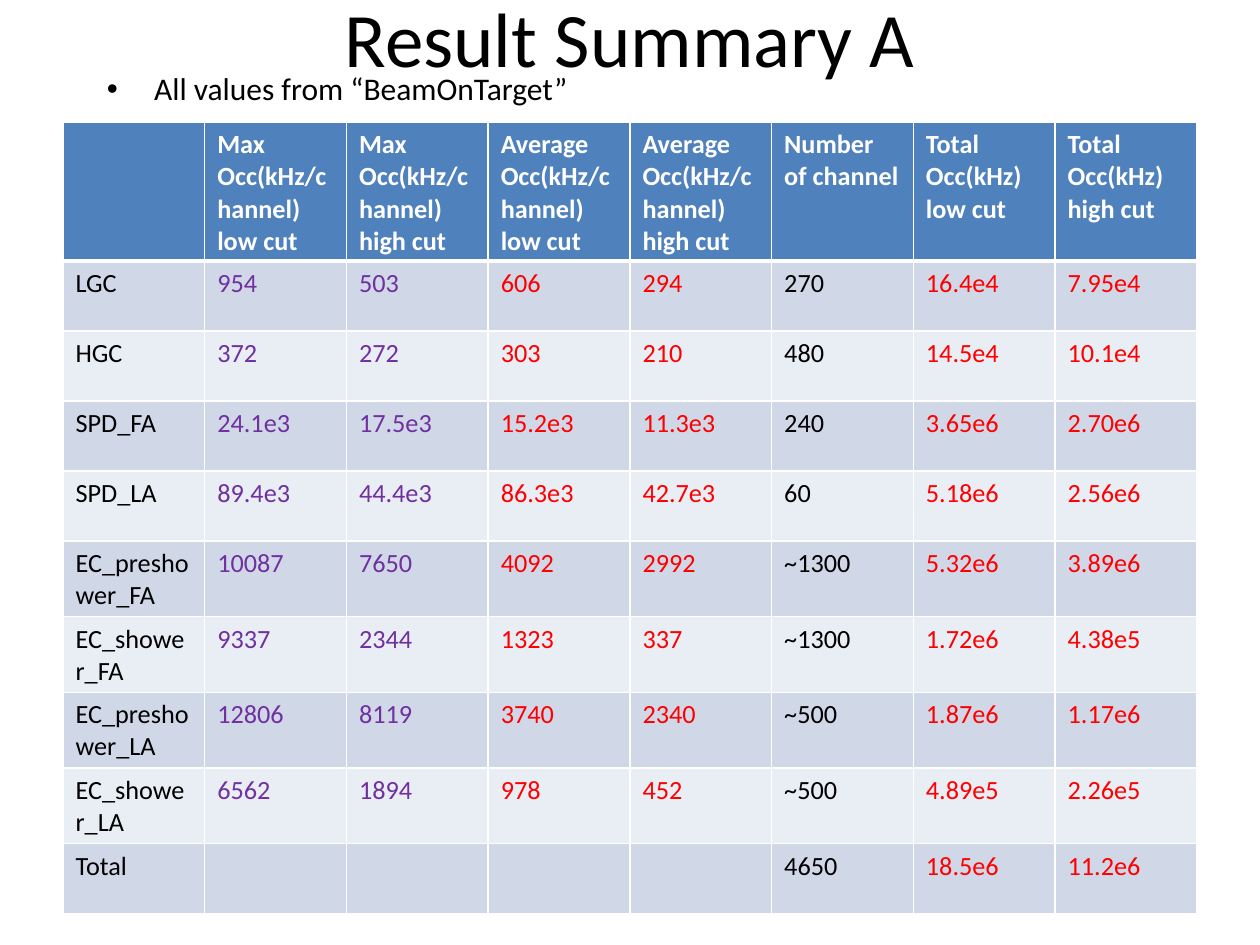
"""Build the occupancy result summary slide."""
import pptx
import pptx.dml.color
import pptx.enum.text
import pptx.oxml.ns
import pptx.util
import lxml.etree

Pt = pptx.util.Pt
RGBColor = pptx.dml.color.RGBColor
qn = pptx.oxml.ns.qn

FONT = "Calibri"
BLACK = RGBColor(0x00, 0x00, 0x00)
WHITE = RGBColor(0xFF, 0xFF, 0xFF)
BLUE = RGBColor(0x4F, 0x81, 0xBD)
DARK = RGBColor(0xD0, 0xD8, 0xE8)
LIGHT = RGBColor(0xE9, 0xED, 0xF4)
PURPLE = RGBColor(0x70, 0x30, 0xA0)
RED = RGBColor(0xFF, 0x00, 0x00)

INKS = [BLACK, PURPLE, PURPLE, RED, RED, BLACK, RED, RED]
HEADS = [
    "",
    "Max Occ(kHz/channel)\nlow cut",
    "Max Occ(kHz/channel)\nhigh cut",
    "Average Occ(kHz/channel)\nlow cut",
    "Average Occ(kHz/channel)\nhigh cut",
    "Number of channel",
    "Total\nOcc(kHz)\nlow cut",
    "Total\nOcc(kHz)\nhigh cut",
]
ROWS = [
    ["LGC", "954", "503", "606", "294", "270", "16.4e4", "7.95e4"],
    ["HGC", "372", "272", "303", "210", "480", "14.5e4", "10.1e4"],
    ["SPD_FA", "24.1e3", "17.5e3", "15.2e3", "11.3e3", "240", "3.65e6", "2.70e6"],
    ["SPD_LA", "89.4e3", "44.4e3", "86.3e3", "42.7e3", "60", "5.18e6", "2.56e6"],
    ["EC_preshower_FA", "10087", "7650", "4092", "2992", "~1300", "5.32e6", "3.89e6"],
    ["EC_shower_FA", "9337", "2344", "1323", "337", "~1300", "1.72e6", "4.38e5"],
    ["EC_preshower_LA", "12806", "8119", "3740", "2340", "~500", "1.87e6", "1.17e6"],
    ["EC_shower_LA", "6562", "1894", "978", "452", "~500", "4.89e5", "2.26e5"],
    ["Total", "", "", "", "", "4650", "18.5e6", "11.2e6"],
]


def style(frame, size, ink, bold=False):
    """Set the font of every paragraph in a text frame."""
    for para in frame.paragraphs:
        font = para.font
        font.name, font.size, font.bold = FONT, Pt(size), bold
        font.color.rgb = ink


def add_text(slide, box, text, size):
    """Add a wrapped text box and return its text frame."""
    frame = slide.shapes.add_textbox(*map(Pt, box)).text_frame
    frame.word_wrap = True
    frame.text = text
    style(frame, size, BLACK)
    return frame


def add_title(slide, text):
    """Add the centred title."""
    frame = add_text(slide, (36, -24, 648, 90), text, 44)
    frame.vertical_anchor = pptx.enum.text.MSO_ANCHOR.MIDDLE
    frame.paragraphs[0].alignment = pptx.enum.text.PP_ALIGN.CENTER


def add_bullet(slide, text):
    """Add the bulleted note under the title."""
    para = add_text(slide, (18, 36, 510, 29), text, 18).paragraphs[0]
    para.level = 1
    props = para._p.get_or_add_pPr()
    props.set("marL", str(Pt(63)))
    props.set("indent", str(Pt(-27)))
    lxml.etree.SubElement(props, qn("a:buFont"), typeface="Arial")
    lxml.etree.SubElement(props, qn("a:buChar"), char="•")


def set_edges(cell, top, base):
    """Give a cell white borders with the given top and bottom widths."""
    props = cell._tc.get_or_add_tcPr()
    for side, width in zip("LRTB", (1, 1, top, base)):
        line = lxml.etree.SubElement(props, qn("a:ln" + side), w=str(Pt(width)))
        fill = lxml.etree.SubElement(line, qn("a:solidFill"))
        lxml.etree.SubElement(fill, qn("a:srgbClr"), val=str(WHITE))


def fill_row(table, row, texts, inks, back):
    """Write and format one table row."""
    head = row == 0
    for col, (text, ink) in enumerate(zip(texts, inks)):
        cell = table.cell(row, col)
        cell.text = text
        style(cell.text_frame, 15, ink, head)
        set_edges(cell, 3 if row == 1 else 1, 3 if head else 1)
        cell.fill.solid()
        cell.fill.fore_color.rgb = back


def add_grid(slide):
    """Add the table of occupancy values."""
    count = len(ROWS) + 1
    frame = slide.shapes.add_table(count, len(HEADS), Pt(36), Pt(70), Pt(648), Pt(436))
    table = frame.table
    for row in table.rows:
        row.height = Pt(40)
    table.rows[0].height = Pt(76)
    fill_row(table, 0, HEADS, [WHITE] * len(HEADS), BLUE)
    for row, texts in enumerate(ROWS, 1):
        fill_row(table, row, texts, INKS, DARK if row % 2 else LIGHT)


def main():
    """Build and save the slide."""
    deck = pptx.Presentation()
    deck.slide_width, deck.slide_height = Pt(720), Pt(540)
    slide = deck.slides.add_slide(deck.slide_layouts[6])
    add_title(slide, "Result Summary A")
    add_grid(slide)
    add_bullet(slide, "All values from “BeamOnTarget”")
    deck.save("out.pptx")


if __name__ == "__main__":
    main()
